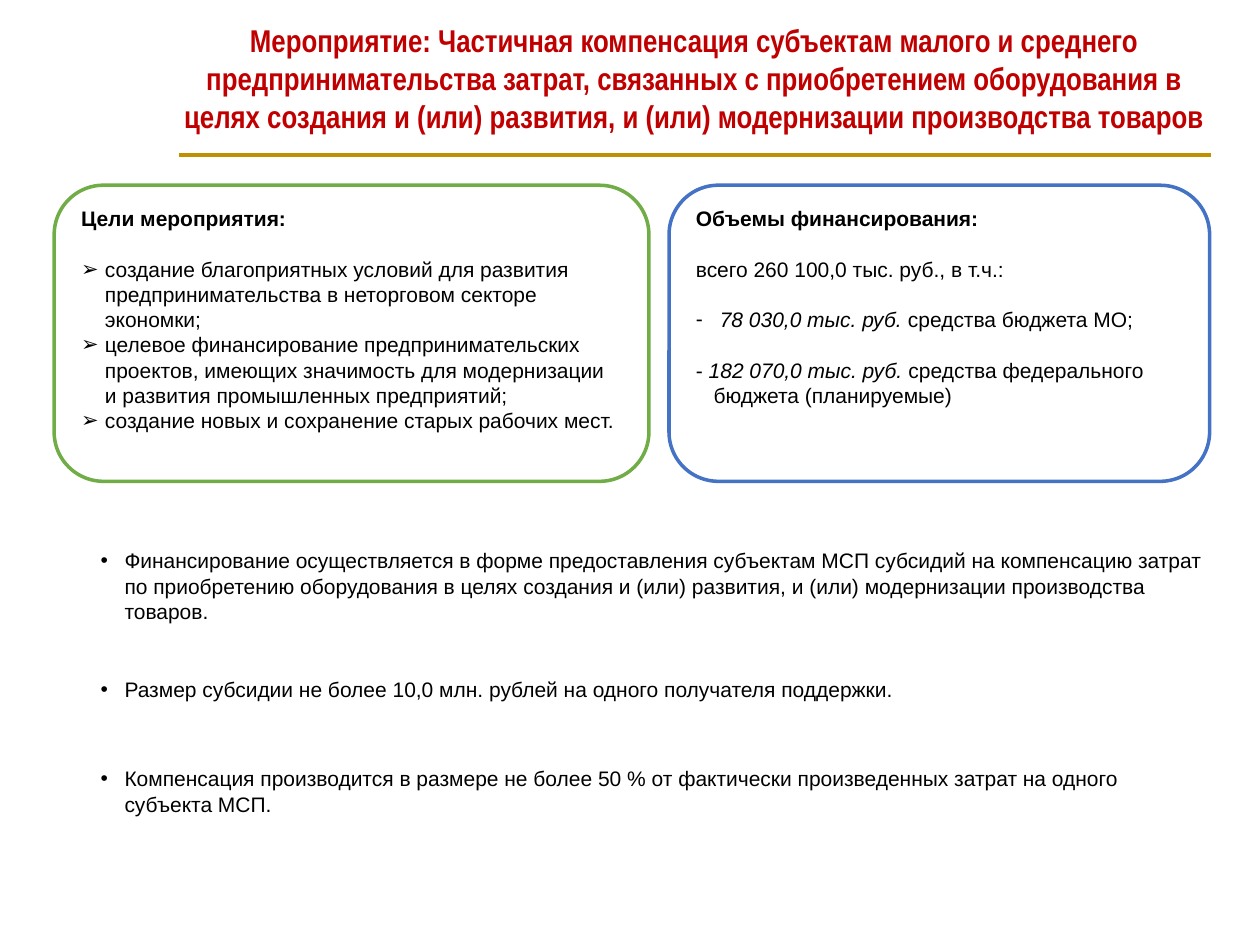
from dataclasses import dataclass

from lxml import etree
from pptx import Presentation
from pptx.dml.color import RGBColor
from pptx.enum.shapes import MSO_CONNECTOR, MSO_SHAPE
from pptx.enum.text import MSO_ANCHOR, PP_ALIGN
from pptx.oxml.ns import qn
from pptx.util import Inches, Length, Pt

LINE = MSO_CONNECTOR.STRAIGHT
ROUND = MSO_SHAPE.ROUNDED_RECTANGLE
TOP = MSO_ANCHOR.TOP
LEFT, CENTER = PP_ALIGN.LEFT, PP_ALIGN.CENTER
COLS, ROWS = 100, 75


@dataclass(frozen=True)
class Theme:
    ink: str = "000000"
    paper: str = "FFFFFF"
    title: str = "C00000"
    rule: str = "BF9000"
    goal: str = "70AD47"
    fund: str = "4472C4"
    body_font: str = "Arial"
    title_font: str = "Arial Narrow"
    body_size: float = 12
    title_size: float = 18
    stroke: float = 2
    hang: float = 0.19
    gap: float = 14.4


@dataclass(frozen=True)
class Run:
    text: str
    bold: bool = False
    italic: bool = False


@dataclass(frozen=True)
class Para:
    runs: tuple[Run, ...]
    bullet: str = ""
    hang: float = 0
    gap: float = 0


@dataclass(frozen=True)
class Area:
    """Left, top, width and height in grid cells."""
    x: float
    y: float
    w: float
    h: float


@dataclass(frozen=True)
class Card:
    area: Area
    color: str
    paras: tuple[Para, ...]


T = Theme()
prs = Presentation()
prs.slide_width, prs.slide_height = Inches(10), Inches(7.5)
slide = prs.slides.add_slide(prs.slide_layouts[6])


def col(n: float) -> Length:
    return Length(round(prs.slide_width * n / COLS))


def row(n: float) -> Length:
    return Length(round(prs.slide_height * n / ROWS))


def place(area: Area) -> tuple[Length, ...]:
    return col(area.x), row(area.y), col(area.w), row(area.h)


def rgb(code: str) -> RGBColor:
    return RGBColor.from_string(code)


def item(text: str, mark: str) -> Para:
    return Para((Run(text),), mark, T.hang)


def write(frame, paras: tuple[Para, ...], font: str = T.body_font,
          size: float = T.body_size, color: str = T.ink, align=LEFT) -> None:
    frame.word_wrap = True
    frame.vertical_anchor = TOP
    for i, spec in enumerate(paras):
        para = frame.add_paragraph() if i else frame.paragraphs[0]
        para.alignment = align
        if spec.gap:
            para.space_before = Pt(spec.gap)
        props = para._p.get_or_add_pPr()
        if spec.hang:
            props.set("marL", str(Inches(spec.hang)))
            props.set("indent", str(-Inches(spec.hang)))
        if spec.bullet:
            etree.SubElement(props, qn("a:buFont"), typeface=T.body_font)
            etree.SubElement(props, qn("a:buChar"), char=spec.bullet)
        for part in spec.runs:
            run = para.add_run()
            run.text = part.text
            run.font.name, run.font.size = font, Pt(size)
            run.font.bold, run.font.italic = part.bold, part.italic
            run.font.color.rgb = rgb(color)


def draw_card(card: Card) -> None:
    shape = slide.shapes.add_shape(ROUND, *place(card.area))
    shape.shadow.inherit = False
    shape.fill.solid()
    shape.fill.fore_color.rgb = rgb(T.paper)
    shape.line.color.rgb = rgb(card.color)
    shape.line.width = Pt(T.stroke)
    write(shape.text_frame, card.paras)


def draw_rule(x: float, end: float, y: float) -> None:
    rule = slide.shapes.add_connector(LINE, col(x), row(y), col(end), row(y))
    rule.line.color.rgb = rgb(T.rule)
    rule.line.width = Pt(T.stroke)
    etree.SubElement(rule._element.spPr, qn("a:effectLst"))


TITLE = (
    "Мероприятие: Частичная компенсация субъектам малого и среднего "
    "предпринимательства затрат, связанных с приобретением оборудования в "
    "целях создания и (или) развития, и (или) модернизации производства товаров"
)

GOALS = (
    Para((Run("Цели мероприятия:", bold=True),)),
    Para((Run("создание благоприятных условий для развития "
              "предпринимательства в неторговом секторе экономки;"),),
         "➢", T.hang, T.gap),
    item("целевое финансирование предпринимательских проектов, имеющих "
         "значимость для модернизации и развития промышленных предприятий;", "➢"),
    item("создание новых и сохранение старых рабочих мест.", "➢"),
)

FUNDS = (
    Para((Run("Объемы финансирования:", bold=True),)),
    Para((Run("всего 260 100,0 тыс. руб., в т.ч.:"),), gap=T.gap),
    Para((Run("78 030,0 тыс. руб. ", italic=True),
          Run("средства бюджета МО;")), "-", T.hang, T.gap),
    Para((Run("- "), Run("182 070,0 тыс. руб.", italic=True),
          Run(" средства федерального бюджета (планируемые)")),
         hang=0.14, gap=T.gap),
)

CARDS = (
    Card(Area(4.3, 14.7, 47.2, 23.5), T.goal, GOALS),
    Card(Area(53.1, 14.7, 42.9, 23.5), T.fund, FUNDS),
)

NOTES = (
    (Area(7, 43, 90.4, 7.1),
     "Финансирование осуществляется в форме предоставления субъектам МСП "
     "субсидий на компенсацию затрат по приобретению оборудования в целях "
     "создания и (или) развития, и (или) модернизации производства товаров."),
    (Area(7, 53.2, 85, 3),
     "Размер субсидии не более 10,0 млн. рублей на одного получателя поддержки."),
    (Area(7, 60.3, 85, 5),
     "Компенсация производится в размере не более 50 % от фактически "
     "произведенных затрат на одного субъекта МСП."),
)

draw_rule(14.2, 96.1, 12.3)
head = slide.shapes.add_textbox(*place(Area(13.2, 1.2, 83.8, 10.1)))
write(head.text_frame, (Para((Run(TITLE, bold=True),)),),
      T.title_font, T.title_size, T.title, CENTER)
for card in CARDS:
    draw_card(card)
for area, text in NOTES:
    note = slide.shapes.add_textbox(*place(area))
    write(note.text_frame, (item(text, "•"),))

prs.save("out.pptx")
